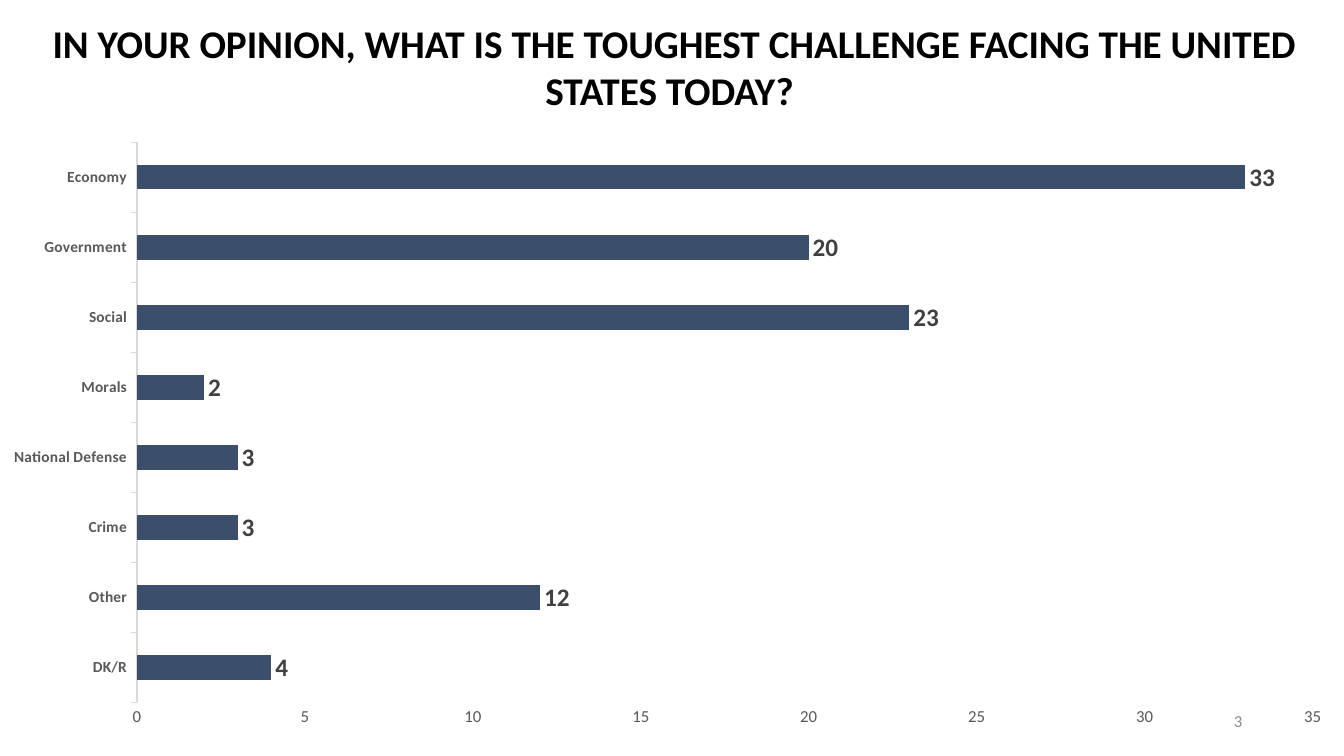
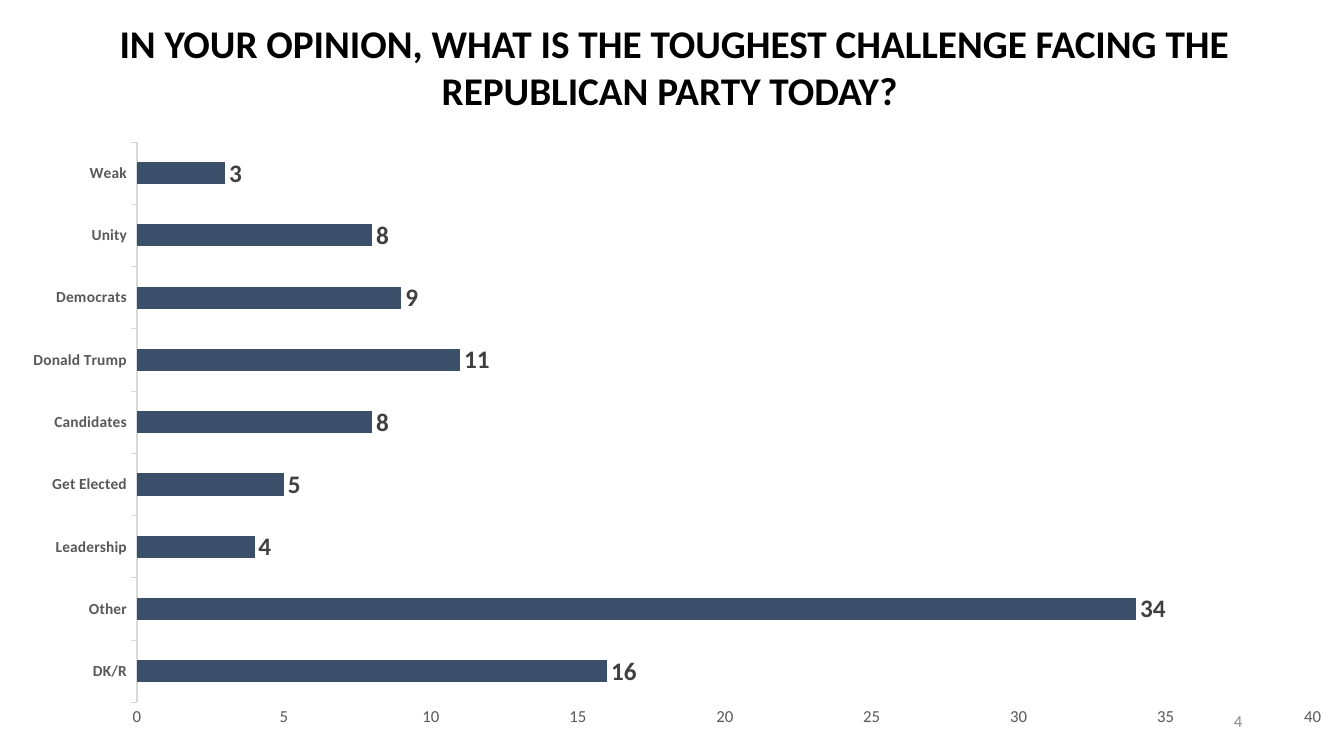
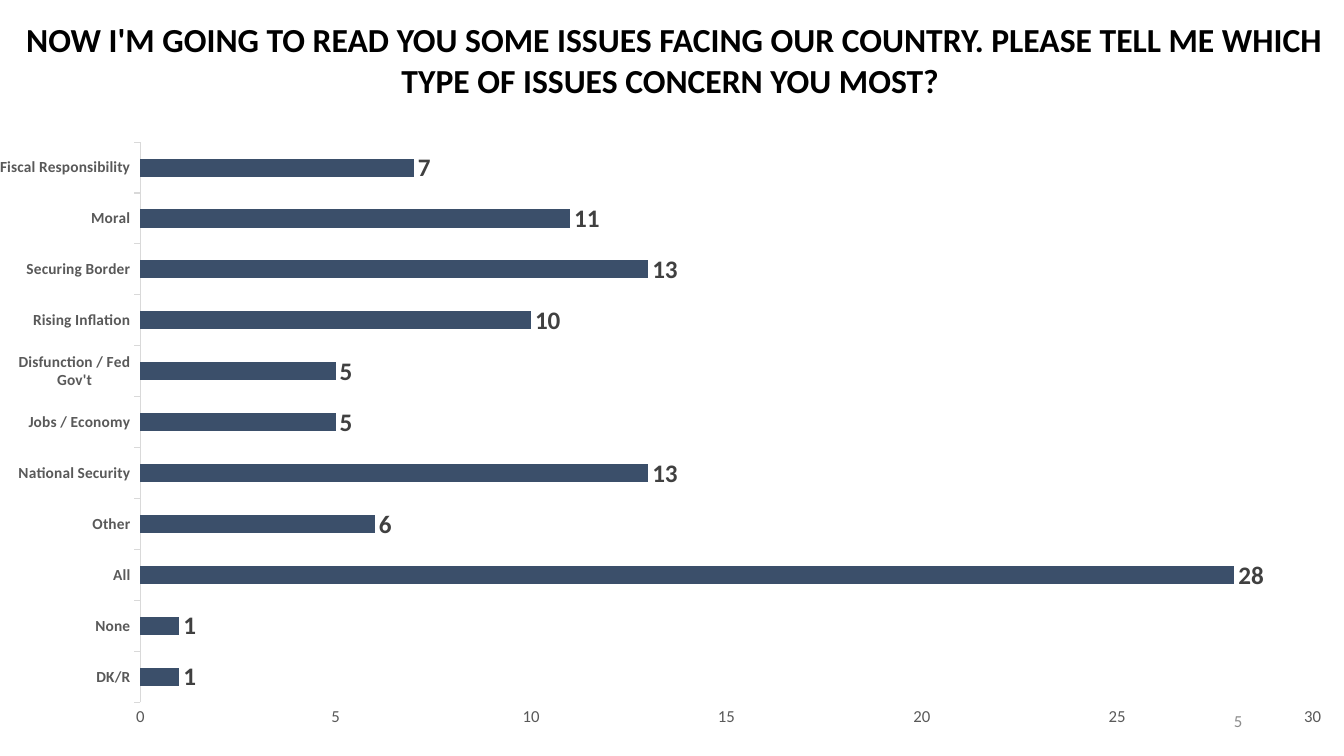
from lxml import etree
from pptx import Presentation
from pptx.chart.data import CategoryChartData
from pptx.dml.color import RGBColor
from pptx.enum.chart import XL_CHART_TYPE, XL_LABEL_POSITION, XL_TICK_MARK
from pptx.enum.text import MSO_ANCHOR, MSO_AUTO_SIZE, PP_ALIGN
from pptx.oxml.ns import qn
from pptx.util import Inches, Pt

BAR = XL_CHART_TYPE.BAR_CLUSTERED
OUTSIDE_END = XL_LABEL_POSITION.OUTSIDE_END
TICK_OUT, TICK_NONE = XL_TICK_MARK.OUTSIDE, XL_TICK_MARK.NONE
TOP, MIDDLE = MSO_ANCHOR.TOP, MSO_ANCHOR.MIDDLE
GROW, FIXED = MSO_AUTO_SIZE.SHAPE_TO_FIT_TEXT, MSO_AUTO_SIZE.NONE
CENTER, RIGHT = PP_ALIGN.CENTER, PP_ALIGN.RIGHT

FIRST_NUMBER = 3
QUESTIONS = [
    ("IN YOUR OPINION, WHAT IS THE TOUGHEST CHALLENGE FACING THE UNITED STATES TODAY? ",
     28, 1.04, 35,
     [("Economy", 33), ("Government", 20), ("Social", 23), ("Morals", 2),
      ("National Defense", 3), ("Crime", 3), ("Other", 12), ("DK/R", 4)]),
    ("IN YOUR OPINION, WHAT IS THE TOUGHEST CHALLENGE FACING THE REPUBLICAN PARTY TODAY? ",
     28, 1.04, 40,
     [("Weak", 3), ("Unity", 8), ("Democrats", 9), ("Donald Trump", 11),
      ("Candidates", 8), ("Get Elected", 5), ("Leadership", 4), ("Other", 34),
      ("DK/R", 16)]),
    ("NOW I'M GOING TO READ YOU SOME ISSUES FACING OUR COUNTRY. PLEASE TELL ME WHICH "
     "TYPE OF ISSUES CONCERN YOU MOST? ",
     24, 0.91, 30,
     [("Fiscal Responsibility", 7), ("Moral", 11), ("Securing Border", 13),
      ("Rising Inflation", 10), ("Disfunction / Fed Gov't", 5),
      ("Jobs / Economy", 5), ("National Security", 13), ("Other", 6),
      ("All", 28), ("None", 1), ("DK/R", 1)]),
]


def rgb(color):
    return RGBColor.from_string(color)


class Deck:
    FONT = "Calibri"
    BLACK, NAVY = "000000", "3B4F6A"
    DARK, GRAY, PALE, RULE = "404040", "595959", "8C8C8C", "D9D9D9"
    PLOT = {"x": 0.103, "y": 0.018, "w": 0.884, "h": 0.91}

    def __init__(self):
        self.prs = Presentation()
        self.prs.slide_width = Inches(13.33)
        self.prs.slide_height = Inches(7.5)

    def new_slide(self):
        self.s = self.prs.slides.add_slide(self.prs.slide_layouts[6])

    def style(self, font, size, color, bold=False):
        font.name, font.size, font.bold = self.FONT, Pt(size), bold
        font.color.rgb = rgb(color)

    def text(self, text, box, size, color, align, anchor, fit, bold=False):
        sp = self.s.shapes.add_textbox(*map(Inches, box))
        tf = sp.text_frame
        tf.word_wrap, tf.auto_size, tf.vertical_anchor = True, fit, anchor
        p = tf.paragraphs[0]
        p.alignment = align
        r = p.add_run()
        r.text = text
        self.style(r.font, size, color, bold)

    def title(self, text, size, height):
        self.text(text, (0.04, 0.14, 13.29, height), size, self.BLACK,
                  CENTER, TOP, GROW, True)

    def number(self, value):
        self.text(str(value), (9.42, 6.95, 3, 0.4), 12, self.PALE,
                  RIGHT, MIDDLE, FIXED)

    def place_plot(self, chart):
        area = chart.element.find(".//" + qn("c:plotArea"))
        for old in area.findall(qn("c:layout")):
            area.remove(old)
        layout = etree.Element(qn("c:layout"))
        area.insert(0, layout)
        manual = etree.SubElement(layout, qn("c:manualLayout"))
        settings = [("layoutTarget", "inner"), ("xMode", "edge"), ("yMode", "edge")]
        for tag, value in settings + list(self.PLOT.items()):
            etree.SubElement(manual, qn("c:" + tag)).set("val", str(value))

    def bar_chart(self, answers, maximum):
        data = CategoryChartData()
        names, values = zip(*reversed(answers))
        data.categories = names
        data.add_series("Series 1", values)
        box = map(Inches, (0, 1.3, 13.19, 6.11))
        chart = self.s.shapes.add_chart(BAR, *box, data).chart
        chart.has_title = chart.has_legend = False
        self.style(chart.font, 10, self.BLACK)
        self.place_plot(chart)

        plot = chart.plots[0]
        plot.gap_width, plot.vary_by_categories = 182, False
        fill = plot.series[0].format.fill
        fill.solid()
        fill.fore_color.rgb = rgb(self.NAVY)
        labels = plot.series[0].data_labels
        labels.show_value, labels.position = True, OUTSIDE_END
        self.style(labels.font, 18, self.DARK, True)

        cat, val = chart.category_axis, chart.value_axis
        for axis, tick, size, bold in ((cat, TICK_OUT, 11, True),
                                       (val, TICK_NONE, 12, False)):
            axis.has_major_gridlines = False
            axis.major_tick_mark, axis.minor_tick_mark = tick, TICK_NONE
            self.style(axis.tick_labels.font, size, self.GRAY, bold)
        cat.format.line.color.rgb = rgb(self.RULE)
        cat.format.line.width = Pt(0.75)
        val.format.line.fill.background()
        val.minimum_scale, val.maximum_scale, val.major_unit = 0, maximum, 5


def main():
    deck = Deck()
    for number, question in enumerate(QUESTIONS, FIRST_NUMBER):
        title, size, height, maximum, answers = question
        deck.new_slide()
        deck.title(title, size, height)
        deck.number(number)
        deck.bar_chart(answers, maximum)
    deck.prs.save("out.pptx")


if __name__ == "__main__":
    main()
